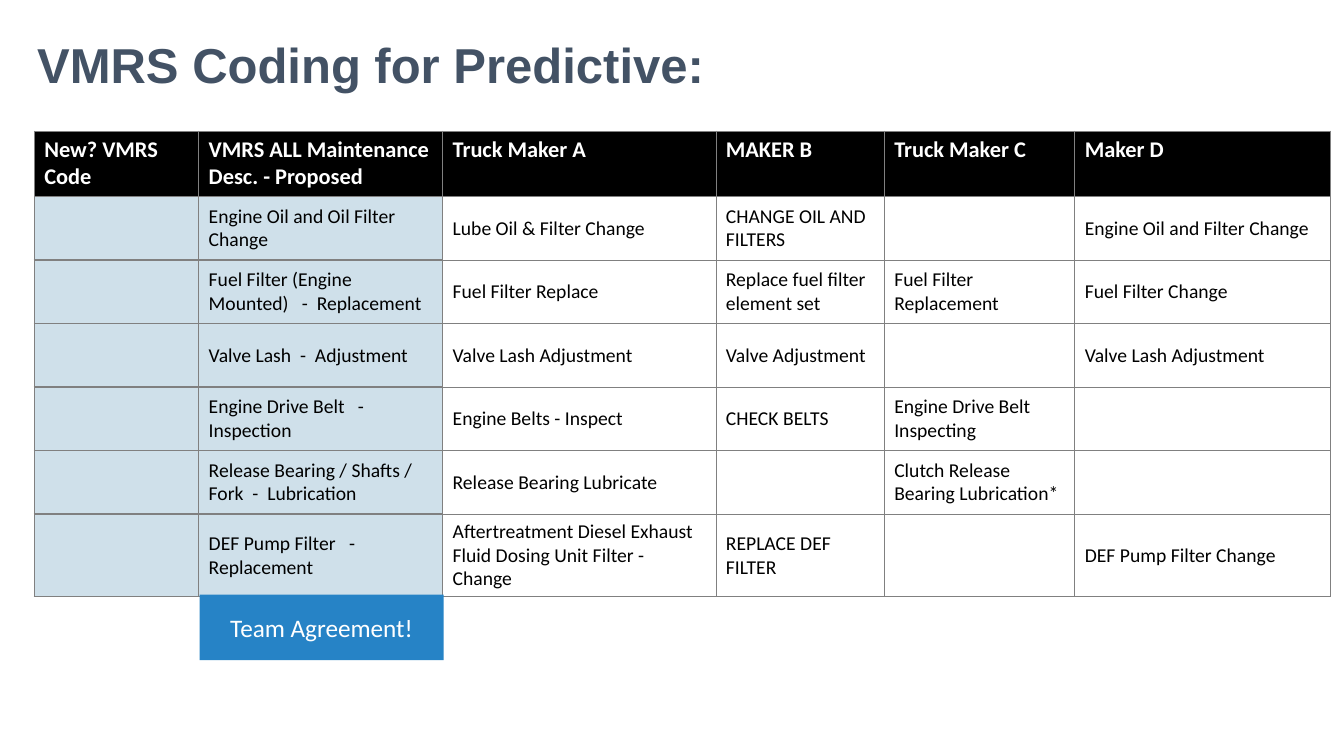
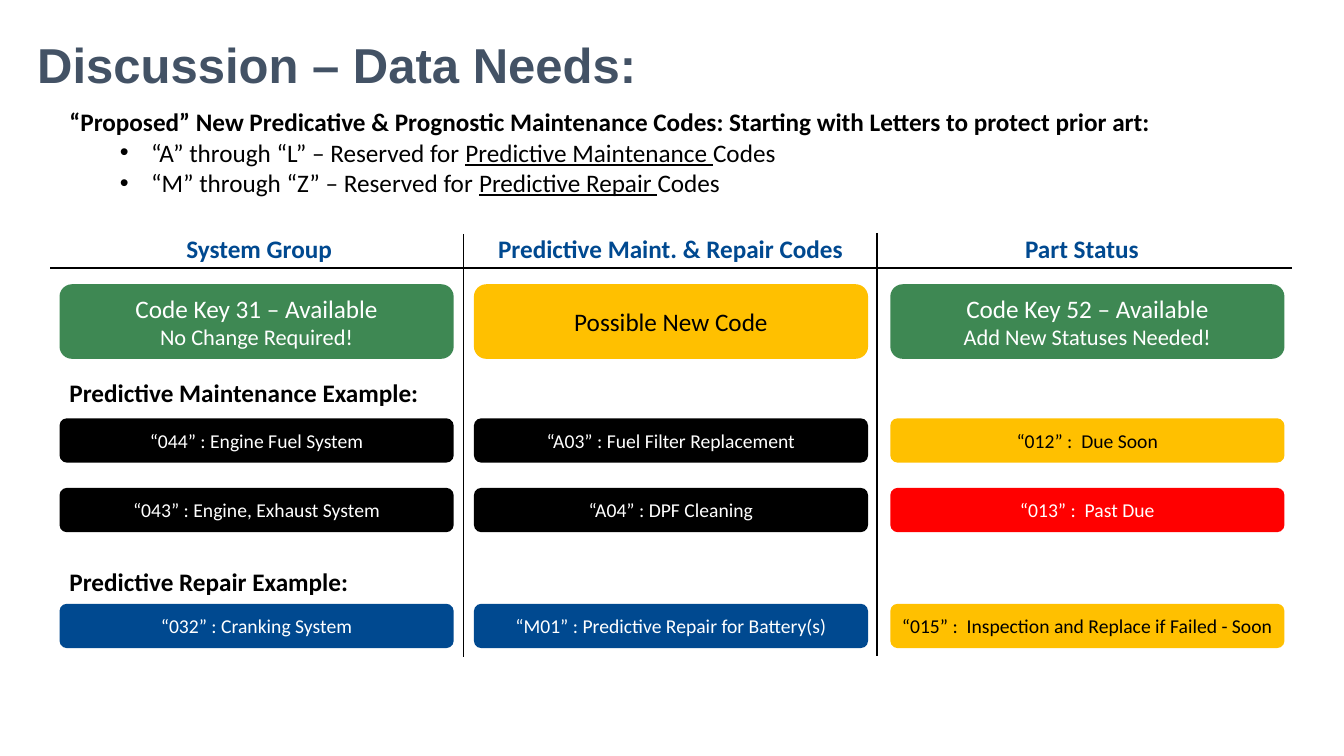
import lxml.etree
import pptx
import pptx.dml.color
import pptx.enum.shapes
import pptx.enum.text
import pptx.oxml
import pptx.oxml.ns
import pptx.util

Inches = pptx.util.Inches
Pt = pptx.util.Pt
colour = pptx.dml.color.RGBColor.from_string
qn = pptx.oxml.ns.qn
SHAPES = pptx.enum.shapes.MSO_SHAPE
ALIGN = pptx.enum.text.PP_ALIGN
ANCHOR = pptx.enum.text.MSO_ANCHOR

# Colours and text formats
BLACK, WHITE, GREY = "000000", "FFFFFF", "808080"
PALE_BLUE, BRIGHT_BLUE, DARK_BLUE = "CFE0EA", "2683C6", "004990"
GREEN, AMBER, RED = "3E8853", "FFC000", "FF0000"
TITLE = {"name": "Arial", "size": Pt(35), "bold": True, "color": "435265"}
BODY = {"name": "Calibri", "size": Pt(18), "bold": False, "color": BLACK}
STRONG = BODY | {"bold": True}
SMALL = BODY | {"size": Pt(14)}
TABLE_HEAD = STRONG | {"size": Pt(16), "color": WHITE}


def write(frame, paragraphs, align=ALIGN.LEFT):
    """Fill a text frame; each paragraph is a list of (text, format) runs."""
    for index, runs in enumerate(paragraphs):
        paragraph = frame.paragraphs[0] if index == 0 else frame.add_paragraph()
        paragraph.alignment = align
        for text, values in runs:
            run = paragraph.add_run()
            run.text = text
            for name, value in values.items():
                if name == "color":
                    run.font.color.rgb = colour(value)
                else:
                    setattr(run.font, name, value)


def add_box(slide, place, paragraphs, fill=None, geometry=SHAPES.ROUNDED_RECTANGLE,
            align=ALIGN.CENTER, anchor=ANCHOR.MIDDLE):
    """Add a filled shape, or a text box when there is no fill."""
    position = [Inches(length) for length in place]
    if fill:
        shape = slide.shapes.add_shape(geometry, *position)
        shape.shadow.inherit = False
        shape.fill.solid()
        shape.fill.fore_color.rgb = colour(fill)
        shape.line.fill.background()
    else:
        shape = slide.shapes.add_textbox(*position)
    shape.text_frame.word_wrap = True
    shape.text_frame.vertical_anchor = anchor
    write(shape.text_frame, paragraphs, align)
    return shape


presentation = pptx.Presentation()
presentation.slide_width = Inches(13.33)
presentation.slide_height = Inches(7.5)

# Slides with their titles
slides = []
for title in ["VMRS Coding for Predictive:", "Discussion – Data Needs:"]:
    slide = presentation.slides.add_slide(presentation.slide_layouts[6])
    box = add_box(slide, (0.27, 0.15, 12, 1.05), [[(title, TITLE)]], align=ALIGN.LEFT)
    box.text_frame.paragraphs[0].line_spacing = 0.9
    slides.append(slide)
coding_slide, data_slide = slides

# Slide 1: table of maintenance descriptions
rows = [
    ["New? VMRS Code", "VMRS ALL Maintenance Desc. - Proposed",
     "Truck Maker A", "MAKER B", "Truck Maker C", "Maker D"],
    ["", "Engine Oil and Oil Filter Change", "Lube Oil & Filter Change",
     "CHANGE OIL AND FILTERS", "", "Engine Oil and Filter Change"],
    ["", "Fuel Filter (Engine Mounted)   -  Replacement", "Fuel Filter Replace",
     "Replace fuel filter element set", "Fuel Filter Replacement", "Fuel Filter Change"],
    ["", "Valve Lash  -  Adjustment", "Valve Lash Adjustment",
     "Valve Adjustment", "", "Valve Lash Adjustment"],
    ["", "Engine Drive Belt   -  Inspection", "Engine Belts - Inspect",
     "CHECK BELTS", "Engine Drive Belt Inspecting", ""],
    ["", "Release Bearing / Shafts / Fork  -  Lubrication", "Release Bearing Lubricate",
     "", "Clutch Release Bearing Lubrication*", ""],
    ["", "DEF Pump Filter   -  Replacement",
     "Aftertreatment Diesel Exhaust Fluid Dosing Unit Filter - Change",
     "REPLACE DEF FILTER", "", "DEF Pump Filter Change"],
]
column_widths = [1.63, 2.42, 2.71, 1.67, 1.89, 2.54]
row_heights = [0.65] + [0.63] * 5 + [0.82]
table = coding_slide.shapes.add_table(
    len(rows), len(column_widths), Inches(0.34), Inches(1.3),
    Inches(sum(column_widths)), Inches(sum(row_heights))).table
table.first_row = table.horz_banding = False
for column, width in zip(table.columns, column_widths):
    column.width = Inches(width)
for row, height in zip(table.rows, row_heights):
    row.height = Inches(height)

for row_index, texts in enumerate(rows):
    for column_index, text in enumerate(texts):
        cell = table.cell(row_index, column_index)
        is_head, is_proposed = row_index == 0, column_index < 2
        cell.vertical_anchor = ANCHOR.TOP if is_head else ANCHOR.MIDDLE
        if text:
            write(cell.text_frame, [[(text, TABLE_HEAD if is_head else SMALL)]])
        # Borders come before the fill in the cell properties
        border_width = Pt(1 if is_proposed and not is_head else 0.5)
        properties = cell._tc.get_or_add_tcPr()
        for side in ["lnL", "lnR", "lnT", "lnB"]:
            border = lxml.etree.SubElement(properties, qn("a:" + side), w=str(border_width))
            solid = lxml.etree.SubElement(border, qn("a:solidFill"))
            lxml.etree.SubElement(solid, qn("a:srgbClr"), val=GREY)
        if is_head or is_proposed:
            cell.fill.solid()
            cell.fill.fore_color.rgb = colour(BLACK if is_head else PALE_BLUE)
        else:
            cell.fill.background()

add_box(coding_slide, (1.98, 5.9, 2.42, 0.65),
        [[("Team Agreement!", BODY | {"color": WHITE})]], BRIGHT_BLUE, SHAPES.RECTANGLE)

# Slide 2: dividing lines
for start_x, start_y, end_x, end_y in [
        (4.6, 2.32, 4.6, 6.52), (8.7, 2.31, 8.7, 6.51), (0.5, 2.66, 12.81, 2.66)]:
    line = data_slide.shapes.add_connector(
        pptx.enum.shapes.MSO_CONNECTOR.STRAIGHT,
        Inches(start_x), Inches(start_y), Inches(end_x), Inches(end_y))
    line.line.color.rgb = colour(BLACK)
    line.line.width = Pt(1)
    lxml.etree.SubElement(line._element.spPr, qn("a:effectLst"))

# Column headings
headings = ["System Group", "Predictive Maint. & Repair Codes", "Part Status"]
for index, heading in enumerate(headings):
    add_box(data_slide, (0.53 + 4.08 * index, 2.27, 4.08, 0.4),
            [[(heading, STRONG | {"color": DARK_BLUE})]], anchor=ANCHOR.TOP)

# Code boxes: top, height, first line size, then (fill, lines) for each column
box_rows = [
    (2.82, 0.74, 18, [(GREEN, ["Code Key 31 – Available", "No Change Required!"]),
                      (AMBER, ["Possible New Code"]),
                      (GREEN, ["Code Key 52 – Available", "Add New Statuses Needed!"])]),
    (4.15, 0.44, 14, [(BLACK, ["“044” : Engine Fuel System"]),
                      (BLACK, ["“A03” : Fuel Filter Replacement"]),
                      (AMBER, ["“012” :  Due Soon"])]),
    (4.84, 0.44, 14, [(BLACK, ["“043” : Engine, Exhaust System"]),
                      (BLACK, ["“A04” : DPF Cleaning"]),
                      (RED, ["“013” :  Past Due"])]),
    (5.99, 0.44, 14, [(DARK_BLUE, ["“032” : Cranking System"]),
                      (DARK_BLUE, ["“M01” : Predictive Repair for Battery(s)"]),
                      (AMBER, ["“015” :  Inspection and Replace if Failed - Soon"])]),
]
for top, height, size, boxes in box_rows:
    for left, (fill, lines) in zip([0.59, 4.7, 8.83], boxes):
        text_format = BODY | {"color": BLACK if fill == AMBER else WHITE}
        paragraphs = [[(text, text_format | {"size": Pt(size - 2 * index)})]
                      for index, text in enumerate(lines)]
        box = add_box(data_slide, (left, top, 3.91, height), paragraphs, fill)
        box.text_frame.margin_left = box.text_frame.margin_right = Inches(0)

# Example headings
for top, text in [(3.75, "Predictive Maintenance Example:"),
                  (5.63, "Predictive Repair Example:")]:
    add_box(data_slide, (0.59, top, 12.14, 0.28), [[(text, STRONG)]], align=ALIGN.LEFT)

# Introduction with bullets
underlined = BODY | {"underline": True}
introduction = add_box(data_slide, (0.59, 1.01, 12, 1.01), [
    [("“Proposed” New Predicative & Prognostic Maintenance Codes: "
      "Starting with Letters to protect prior art:", STRONG)],
    [("“A” through “L” – Reserved for ", BODY),
     ("Predictive Maintenance ", underlined), ("Codes", BODY)],
    [("“M” through “Z” – Reserved for ", BODY),
     ("Predictive Repair ", underlined), ("Codes", BODY)],
], align=ALIGN.LEFT, anchor=ANCHOR.TOP)
for paragraph in introduction.text_frame.paragraphs[1:]:
    paragraph.level = 1
    properties = paragraph._p.get_or_add_pPr()
    properties.set("marL", str(Inches(0.81)))
    properties.set("indent", str(Inches(-0.31)))
    lxml.etree.SubElement(properties, qn("a:buFont"), typeface="Arial")
    lxml.etree.SubElement(properties, qn("a:buChar"), char="•")

presentation.save("out.pptx")
